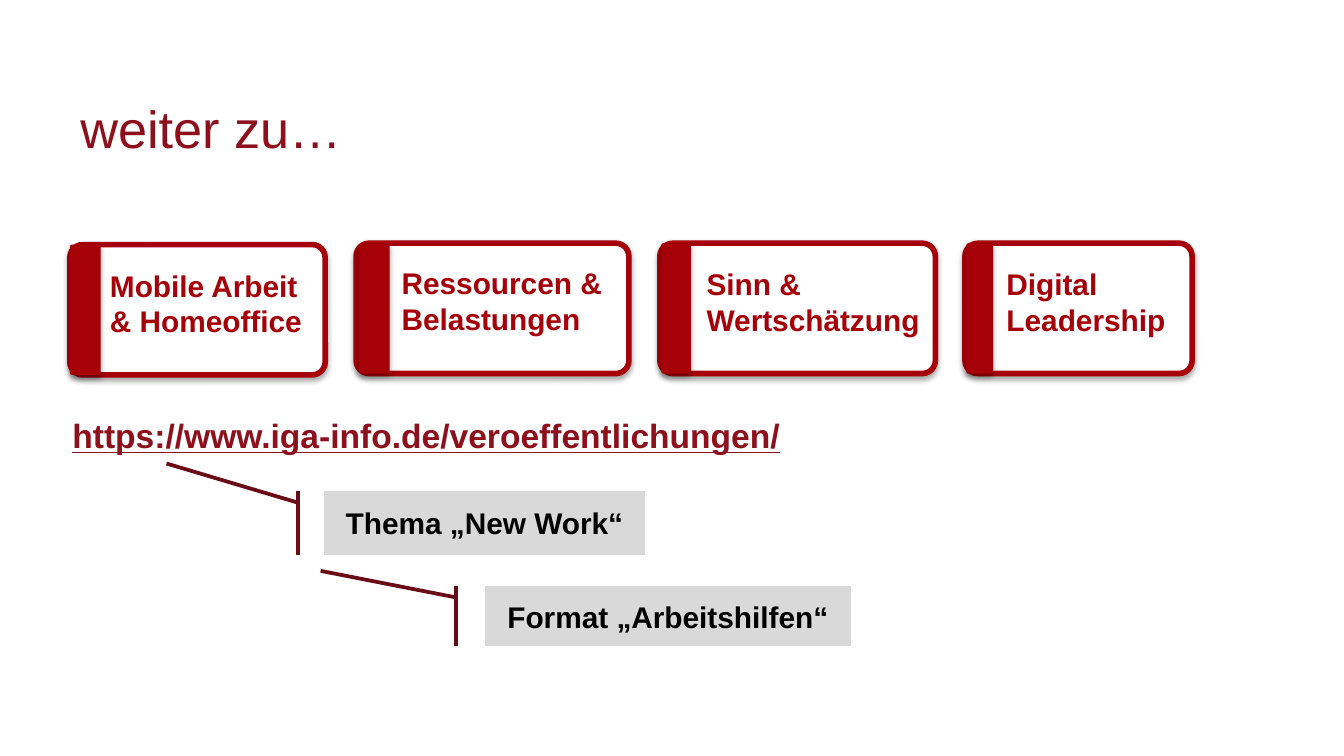
from lxml import etree
from pptx import Presentation
from pptx.dml.color import RGBColor
from pptx.enum.shapes import MSO_SHAPE as Shape
from pptx.enum.text import MSO_ANCHOR as Anchor, PP_ALIGN as Align
from pptx.oxml.ns import qn
from pptx.util import Inches, Pt

RED, WINE, DARK = "A60009", "8E101C", "690C15"
WHITE, GREY, BLACK = "FFFFFF", "D9D9D9", "000000"


def color(code):
    return RGBColor.from_string(code)


def style(shape, text, size, code, bold=True, under=None):
    frame = shape.text_frame
    frame.word_wrap = True
    frame.text = text
    font = frame.paragraphs[0].runs[0].font
    font.name, font.size = "Arial", Pt(size)
    font.bold, font.underline = bold, under
    font.color.rgb = color(code)
    return frame


def add_text(shapes, box, text, size, code, **looks):
    label = shapes.add_textbox(*map(Inches, box))
    style(label, text, size, code, **looks)


def add_box(shapes, kind, box, fill, line=None, width=0):
    shape = shapes.add_shape(kind, *map(Inches, box))
    shape.shadow.inherit = False
    shape.fill.solid()
    shape.fill.fore_color.rgb = color(fill)
    if line:
        shape.line.color.rgb = color(line)
        shape.line.width = Pt(width)
    else:
        shape.line.fill.background()
    return shape


def add_shade(shape):
    """Give the shape a soft shadow straight below it."""
    effects = shape._element.spPr.find(qn("a:effectLst"))
    shade = etree.SubElement(
        effects, qn("a:outerShdw"), blurRad=str(Pt(3.1)), dist=str(Pt(1.8)),
        dir="5400000", algn="t", rotWithShape="0")
    black = etree.SubElement(shade, qn("a:srgbClr"), val=BLACK)
    etree.SubElement(black, qn("a:alpha"), val="35000")


def add_card(slide, text, left, top, width, strip, label):
    """Draw a card; strip is (left, width), label is (left, top, width)."""
    shapes = slide.shapes.add_group_shape().shapes
    high = 0.97
    card = add_box(shapes, Shape.ROUNDED_RECTANGLE,
                   (left, top, width, high), WHITE, RED, 3)
    card.adjustments[0] = 0.1
    add_shade(card)
    add_text(shapes, (*label, 0.64), text, 16, RED)
    edge = add_box(shapes, Shape.ROUNDED_RECTANGLE,
                   (strip[0], top, strip[1], high), RED)
    edge.adjustments[0] = 0.08
    add_shade(edge)


def add_callout(slide, text, box, tip):
    """Draw a callout with a bar; tip is (y, x) as shares of the box."""
    note = add_box(slide.shapes, Shape.LINE_CALLOUT_1_ACCENT_BAR,
                   box, GREY, DARK, 2)
    for i, share in enumerate((0.19, -0.08, *tip)):
        note.adjustments[i] = share
    frame = style(note, text, 16, BLACK)
    frame.vertical_anchor = Anchor.MIDDLE
    frame.paragraphs[0].alignment = Align.CENTER


def main():
    deck = Presentation()
    deck.slide_width = Inches(10)
    deck.slide_height = Inches(10 * 9 / 16)
    slide = deck.slides.add_slide(deck.slide_layouts[6])

    add_text(slide.shapes, (0.5, 0.67, 6.68, 0.71), "weiter zu…", 28, WINE, bold=False)

    cards = [
        ("Mobile Arbeit & Homeoffice", 0.52, 1.82, 1.9, (0.52, 0.23), (0.72, 1.94, 1.7)),
        ("Digital Leadership", 7.18, 1.81, 1.69, (7.19, 0.2), (7.39, 1.93, 1.41)),
        ("Sinn & Wertschätzung", 4.91, 1.81, 2.05, (4.92, 0.22), (5.16, 1.93, 1.8)),
        ("Ressourcen & Belastungen", 2.65, 1.81, 2.03, (2.67, 0.23), (2.89, 1.92, 1.69)),
    ]
    for card in cards:
        add_card(slide, *card)

    add_text(slide.shapes, (0.44, 3.04, 8.38, 0.4),
             "https://www.iga-info.de/veroeffentlichungen/", 18, WINE, under=True)
    add_callout(slide, "Thema „New Work“", (2.41, 3.65, 2.39, 0.48), (-0.42, -0.49))
    add_callout(slide, "Format „Arbeitshilfen“", (3.61, 4.36, 2.72, 0.45), (-0.25, -0.45))
    deck.save("out.pptx")


if __name__ == "__main__":
    main()
